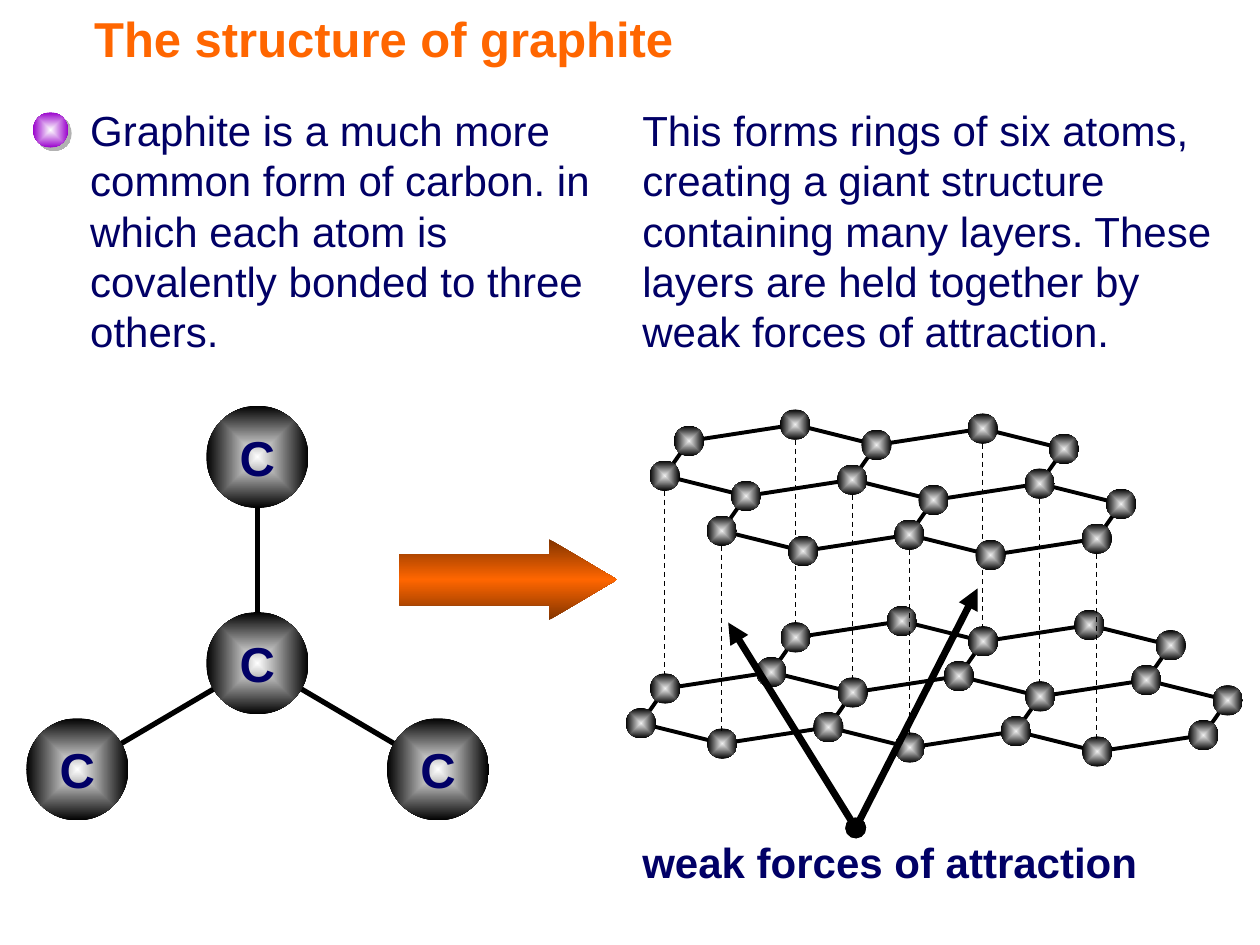
from math import hypot

from pptx import Presentation
from pptx.dml.color import RGBColor
from pptx.enum.dml import MSO_LINE_DASH_STYLE as Dash
from pptx.enum.shapes import MSO_CONNECTOR as Connector, MSO_SHAPE as Shape
from pptx.enum.text import MSO_ANCHOR as Anchor, PP_ALIGN as Align
from pptx.oxml import parse_xml
from pptx.oxml.ns import nsdecls, qn
from pptx.util import Cm, Pt

FONT = "Arial"
NAVY, ORANGE, BLACK = "010066", "FF6600", "000000"

TITLE = "The structure of graphite"
TEXTS = [
    ("Graphite is a much more common form of carbon. in which each atom is "
     "covalently bonded to three others.", (1.57, 1.98, 11.13, 5.33), False),
    ("This forms rings of six atoms, creating a giant structure containing many "
     "layers. These layers are held together by weak forces of attraction.",
     (12.7, 1.98, 12.7, 5.33), False),
    ("weak forces of attraction", (12.7, 16.74, 10.57, 1.27), True),
]

CENTRAL_ATOM = (5.19, 13.37)
BONDED_ATOMS = [(5.19, 9.21), (1.56, 15.51), (8.83, 15.51)]
BONDED_SIZE, BONDED_TRIM = 2.06, 0.68

COLUMN_STEP, ROW_STEP, PARTNER_STEP = (3.78, 0.08), (1.15, 1.11), (2.14, -0.33)
RING = [(0, 0, 0), (0, 0, 1), (1, 0, 0), (0, 1, 1), (0, 1, 0), (-1, 1, 1)]
UPPER_ORIGIN, UPPER_RINGS = (13.89, 8.89), [(0, 0), (1, 0), (0, 1), (1, 1)]
LOWER_ORIGIN, LOWER_RINGS = (16.04, 12.85), UPPER_RINGS + [(-1, 1)]
LAYER_ATOM_SIZE, LAYER_TRIM = 0.61, 0.26
FORCE_START, FORCE_END = 0.3, 4.03

POINTER_ORIGIN = (17.25, 16.69)
POINTER_TARGETS = [(14.68, 12.55), (19.71, 11.86)]


def rgb(color):
    return RGBColor.from_string(color)


def add_text(slide, text, box, size, color, bold):
    shape = slide.shapes.add_textbox(*map(Cm, box))
    frame = shape.text_frame
    frame.word_wrap = True
    frame.text = text
    format_font(frame.paragraphs[0].font, size, color, bold)
    return frame


def format_font(font, size, color, bold):
    font.name, font.size, font.bold = FONT, Pt(size), bold
    font.color.rgb = rgb(color)


def set_gradient(shape, stops, direction):
    shape.fill.background()
    stop_xml = "".join(
        f'<a:gs pos="{position * 1000}"><a:srgbClr val="{color}"/></a:gs>'
        for position, color in stops)
    gradient = parse_xml(
        f'<a:gradFill {nsdecls("a")} rotWithShape="1">'
        f"<a:gsLst>{stop_xml}</a:gsLst>{direction}</a:gradFill>")
    properties = shape.element.spPr
    properties.replace(properties.find(qn("a:noFill")), gradient)
    shape.line.fill.background()
    shape.shadow.inherit = False


def add_ball(parent, center, size, inner, outer):
    x, y = center
    ball = parent.shapes.add_shape(
        Shape.OVAL, Cm(x - size / 2), Cm(y - size / 2), Cm(size), Cm(size))
    set_gradient(ball, [(0, inner), (100, outer)],
                 '<a:path path="shape"><a:fillToRect l="50000" t="50000" '
                 'r="50000" b="50000"/></a:path>')
    return ball


def add_line(parent, start, end, width, trim=0, dashed=False):
    dx, dy = end[0] - start[0], end[1] - start[1]
    share = trim / hypot(dx, dy)
    line = parent.shapes.add_connector(
        Connector.STRAIGHT,
        Cm(start[0] + dx * share), Cm(start[1] + dy * share),
        Cm(end[0] - dx * share), Cm(end[1] - dy * share))
    line.line.color.rgb = rgb(BLACK)
    line.line.width = Pt(width)
    if dashed:
        line.line.dash_style = Dash.DASH
    line._element.spPr.append(parse_xml(f'<a:effectLst {nsdecls("a")}/>'))
    return line


def build_layer(origin, rings):
    atoms, bonds = {}, set()
    for ring_column, ring_row in rings:
        keys = [(ring_column + c, ring_row + r, p) for c, r, p in RING]
        for column, row, partner in keys:
            atoms[column, row, partner] = tuple(
                origin[axis] + column * COLUMN_STEP[axis]
                + row * ROW_STEP[axis] + partner * PARTNER_STEP[axis]
                for axis in (0, 1))
        for pair in zip(keys, keys[1:] + keys[:1]):
            bonds.add(tuple(sorted(pair)))
    return atoms, sorted(bonds)


def add_layer(group, atoms, bonds):
    for first, second in bonds:
        add_line(group, atoms[first], atoms[second], 2.25, LAYER_TRIM)
    for center in atoms.values():
        add_ball(group, center, LAYER_ATOM_SIZE, "EFEFEF", BLACK)


def add_forces(group, centers):
    for x, y in centers:
        add_line(group, (x, y + FORCE_START), (x, y + FORCE_END), 0.75, dashed=True)


def add_graphite(slide):
    group = slide.shapes.add_group_shape()
    upper = build_layer(UPPER_ORIGIN, UPPER_RINGS)
    lower = build_layer(LOWER_ORIGIN, LOWER_RINGS)
    rear, front = [], []
    for (_, row, partner), center in upper[0].items():
        if partner:
            (front if row == 2 else rear).append(center)
    add_forces(group, rear)
    add_layer(group, *upper)
    add_layer(group, *lower)
    add_forces(group, front)


def add_bonded_atoms(slide):
    group = slide.shapes.add_group_shape()
    for center in BONDED_ATOMS:
        add_line(group, center, CENTRAL_ATOM, 3, BONDED_TRIM)
    for center in BONDED_ATOMS + [CENTRAL_ATOM]:
        atom = add_ball(group, center, BONDED_SIZE, "FFFFFF", BLACK)
        frame = atom.text_frame
        frame.word_wrap = False
        frame.vertical_anchor = Anchor.MIDDLE
        frame.text = "C"
        paragraph = frame.paragraphs[0]
        paragraph.alignment = Align.CENTER
        format_font(paragraph.font, 28, NAVY, True)


def add_bullet(slide):
    bullet = add_ball(slide, (1.02, 2.62), 0.71, "FFFFFF", "9900CC")
    bullet.element.spPr.find(qn("a:effectLst")).append(parse_xml(
        f'<a:outerShdw {nsdecls("a")} dist="35921" dir="2700000" '
        'algn="ctr" rotWithShape="0"><a:srgbClr val="B2B2B2"/></a:outerShdw>'))


def add_block_arrow(slide):
    arrow = slide.shapes.add_shape(
        Shape.RIGHT_ARROW, Cm(8.05), Cm(10.87), Cm(4.39), Cm(1.63))
    arrow.adjustments[0], arrow.adjustments[1] = 0.63, 0.84
    set_gradient(arrow, [(0, "823400"), (50, ORANGE), (100, "823400")],
                 '<a:lin ang="5400000" scaled="1"/>')


def add_pointers(slide):
    group = slide.shapes.add_group_shape()
    for target in POINTER_TARGETS:
        pointer = add_line(group, POINTER_ORIGIN, target, 4)
        outline = pointer._element.spPr.find(qn("a:ln"))
        for tag, kind in (("headEnd", "oval"), ("tailEnd", "triangle")):
            outline.append(parse_xml(f'<a:{tag} {nsdecls("a")} type="{kind}"/>'))


def main():
    presentation = Presentation()
    presentation.slide_width, presentation.slide_height = Cm(25.4), Cm(19.05)
    slide = presentation.slides.add_slide(presentation.slide_layouts[6])
    title = add_text(slide, TITLE, (0, 0, 18.11, 1.52), 28, ORANGE, True)
    title.margin_left = Cm(1.9)
    title.vertical_anchor = Anchor.MIDDLE
    add_bullet(slide)
    for text, box, bold in TEXTS:
        add_text(slide, text, box, 24, NAVY, bold)
    add_graphite(slide)
    add_bonded_atoms(slide)
    add_block_arrow(slide)
    add_pointers(slide)
    presentation.save("out.pptx")


if __name__ == "__main__":
    main()
